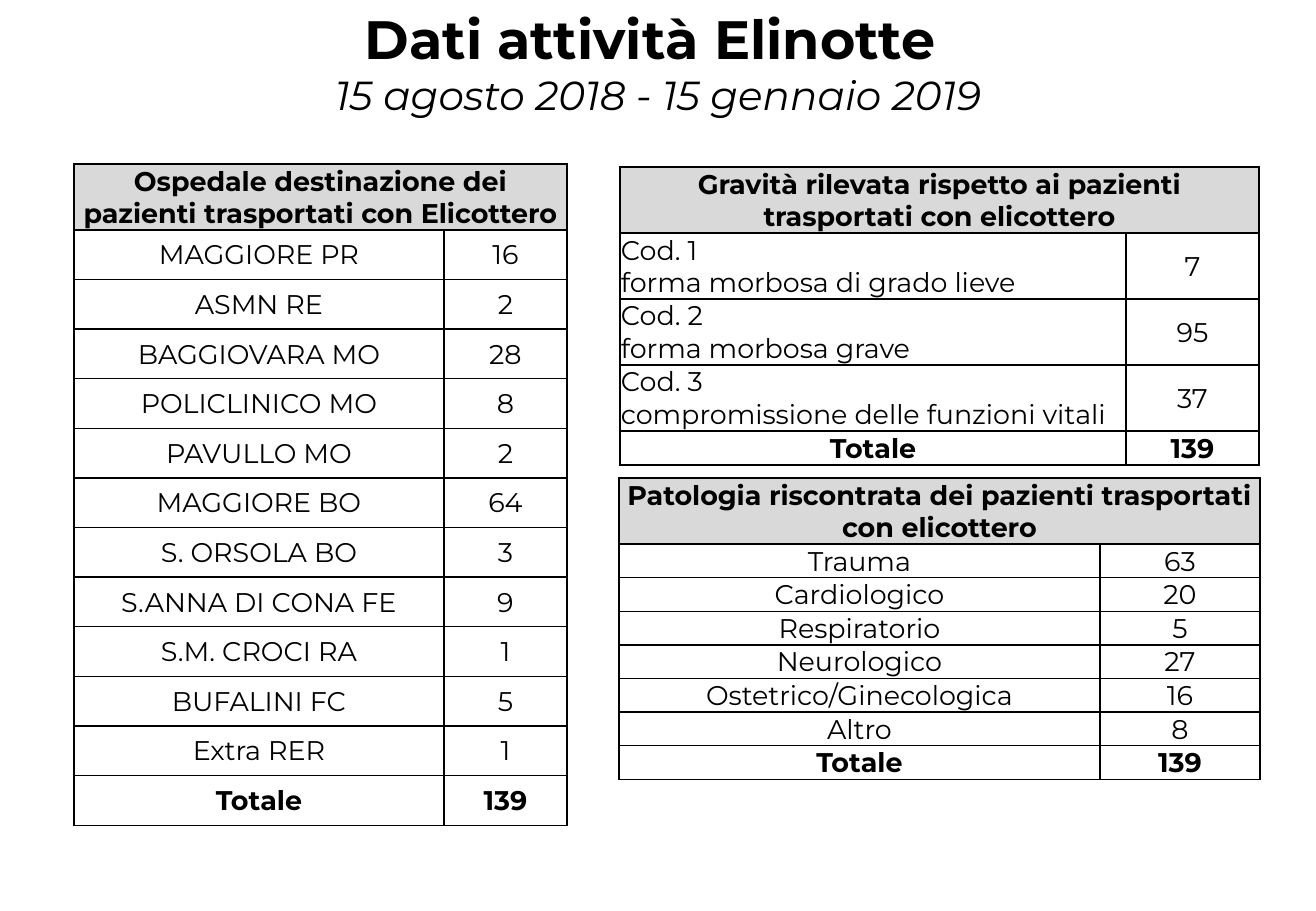
import dataclasses

import lxml.etree
import pptx
import pptx.dml.color
import pptx.enum.text
import pptx.oxml.ns
import pptx.util

SCALE = 914400 / 121.5
FONT = "Montserrat"
BLACK = pptx.dml.color.RGBColor(0, 0, 0)
GREY = pptx.dml.color.RGBColor(0xD9, 0xD9, 0xD9)
CENTER = pptx.enum.text.PP_ALIGN.CENTER
LEFT = pptx.enum.text.PP_ALIGN.LEFT
MIDDLE = pptx.enum.text.MSO_ANCHOR.MIDDLE
HEAD = 66


@dataclasses.dataclass(frozen=True)
class Grid:
    """A count table: heading, one row per label, then the total."""
    left: int
    top: int
    cols: tuple[int, int]
    title: str
    rows: dict[str, int]
    body: int
    foot: int
    align: pptx.enum.text.PP_ALIGN = CENTER


GRIDS = (
    Grid(74, 164, (370, 123),
         "Ospedale destinazione dei pazienti trasportati con Elicottero",
         {"MAGGIORE PR": 16, "ASMN RE": 2, "BAGGIOVARA MO": 28,
          "POLICLINICO MO": 8, "PAVULLO MO": 2, "MAGGIORE BO": 64,
          "S. ORSOLA BO": 3, "S.ANNA DI CONA FE": 9, "S.M. CROCI RA": 1,
          "BUFALINI FC": 5, "Extra RER": 1},
         body=546, foot=50),
    Grid(620, 167, (506, 133),
         "Gravità rilevata rispetto ai pazienti trasportati con elicottero",
         {"Cod. 1\nforma morbosa di grado lieve": 7,
          "Cod. 2\nforma morbosa grave": 95,
          "Cod. 3\ncompromissione delle funzioni vitali": 37},
         body=198, foot=34, align=LEFT),
    Grid(619, 478, (481, 160),
         "Patologia riscontrata dei pazienti trasportati con elicottero",
         {"Trauma": 63, "Cardiologico": 20, "Respiratorio": 5,
          "Neurologico": 27, "Ostetrico/Ginecologica": 16, "Altro": 8},
         body=202, foot=34),
)


def px(size: float) -> pptx.util.Emu:
    return pptx.util.Emu(round(size * SCALE))


def write(para, text: str, *, size: int = 16, bold: bool = False,
          italic: bool = False, align=CENTER) -> None:
    para.alignment = align
    run = para.add_run()
    run.text = text
    font = run.font
    font.name, font.size = FONT, pptx.util.Pt(size)
    font.bold, font.italic = bold, italic
    font.color.rgb = BLACK


def edge(cell) -> None:
    """Give the cell a thin black line on all four sides."""
    props = cell._tc.get_or_add_tcPr()
    for side in ("lnL", "lnR", "lnT", "lnB"):
        line = lxml.etree.SubElement(
            props, pptx.oxml.ns.qn(f"a:{side}"), w=str(pptx.util.Pt(1)))
        fill = lxml.etree.SubElement(line, pptx.oxml.ns.qn("a:solidFill"))
        lxml.etree.SubElement(
            fill, pptx.oxml.ns.qn("a:srgbClr"), val=str(BLACK))


def fill_cell(cell, text: str, *, bold: bool = False, align=CENTER) -> None:
    cell.vertical_anchor = MIDDLE
    cell.margin_left = cell.margin_right = cell.margin_top = px(1)
    cell.margin_bottom = 0
    frame = cell.text_frame
    for i, line in enumerate(text.split("\n") if text else ()):
        para = frame.add_paragraph() if i else frame.paragraphs[0]
        write(para, line, bold=bold, align=align)


def add_grid(slide, grid: Grid) -> None:
    total = sum(grid.rows.values())
    rows = [(grid.title, ""),
            *((name, str(count)) for name, count in grid.rows.items()),
            ("Totale", str(total))]
    last = len(rows) - 1
    high = [HEAD, *[grid.body / len(grid.rows)] * len(grid.rows), grid.foot]
    table = slide.shapes.add_table(
        len(rows), 2, px(grid.left), px(grid.top),
        px(sum(grid.cols)), px(sum(high))).table
    table.first_row = table.horz_banding = False
    for col, width in zip(table.columns, grid.cols):
        col.width = px(width)
    table.cell(0, 0).merge(table.cell(0, 1))
    for r, row in enumerate(rows):
        table.rows[r].height = px(high[r])
        for c, text in enumerate(row):
            cell = table.cell(r, c)
            body = 0 < r < last
            fill_cell(cell, text, bold=not body,
                      align=grid.align if body and c == 0 else CENTER)
            edge(cell)
            if r == 0:
                cell.fill.solid()
                cell.fill.fore_color.rgb = GREY
            else:
                cell.fill.background()


def add_title(slide) -> None:
    title = slide.shapes.title
    title.left, title.top = px(56), px(-1)
    title.width, title.height = px(1204), px(126)
    frame = title.text_frame
    frame.word_wrap = True
    frame.auto_size = pptx.enum.text.MSO_AUTO_SIZE.SHAPE_TO_FIT_TEXT
    frame.vertical_anchor = pptx.enum.text.MSO_ANCHOR.TOP
    write(frame.paragraphs[0], "Dati attività Elinotte ", size=32, bold=True)
    write(frame.add_paragraph(), "15 agosto 2018 - 15 gennaio 2019",
          size=24, italic=True)


def main() -> None:
    deck = pptx.Presentation()
    deck.slide_width, deck.slide_height = px(1316), px(911)
    slide = deck.slides.add_slide(deck.slide_layouts[5])
    add_title(slide)
    for grid in GRIDS:
        add_grid(slide, grid)
    deck.save("out.pptx")


if __name__ == "__main__":
    main()
